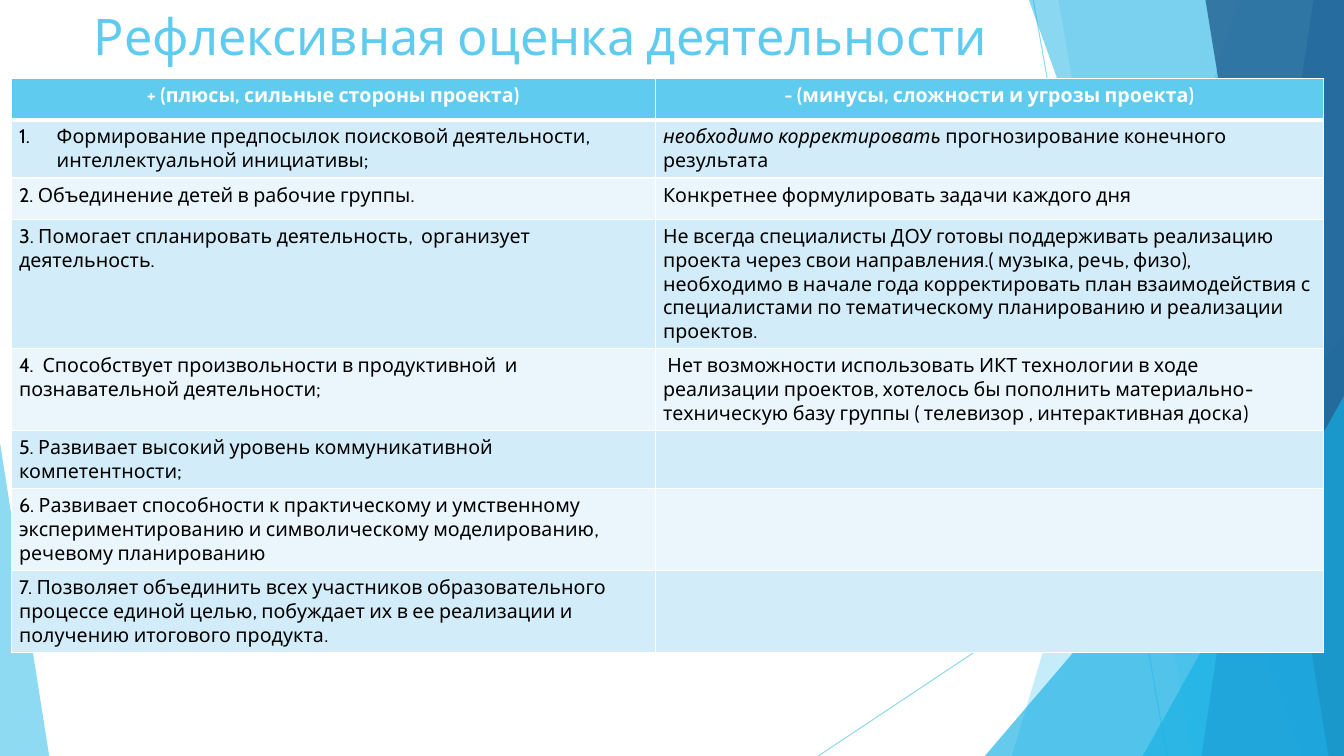
import pptx
import pptx.dml.color
import pptx.enum.shapes
import pptx.enum.text
import pptx.oxml
import pptx.oxml.ns
import pptx.util
from lxml import etree

Cm, Pt = pptx.util.Cm, pptx.util.Pt
RGB = pptx.dml.color.RGBColor.from_string
qn = pptx.oxml.ns.qn

FONT = "Cabin"
COLORS = {"sky": "5FCBEF", "cyan": "17B0E4", "blue": "2E83C3", "navy": "226292",
          "odd": "D2ECF9", "even": "EAF6FC", "white": "FFFFFF", "black": "000000"}
WIDTH, HEIGHT = 33.87, 19.05


def paint(color_format, color, opacity):
    """Apply a palette colour with an opacity in percent to a fill or line."""
    color_format.solid()
    color_format.fore_color.rgb = RGB(COLORS[color])
    srgb = color_format._xPr.find(".//" + qn("a:srgbClr"))
    etree.SubElement(srgb, qn("a:alpha"), val=str(opacity * 1000))


def style(run, size, color, bold=False):
    run.font.name = FONT
    run.font.size = Pt(size)
    run.font.bold = bold
    run.font.color.rgb = RGB(COLORS[color])


prs = pptx.Presentation()
prs.slide_width, prs.slide_height = Cm(WIDTH), Cm(HEIGHT)
slide = prs.slides.add_slide(prs.slide_layouts[5])
shapes = slide.shapes

# Thin crossing rays
for x1, y1, x2, y2 in [(26.04, 0, 29.41, HEIGHT), (WIDTH, 10.24, 20.62, HEIGHT)]:
    ray = shapes.add_connector(pptx.enum.shapes.MSO_CONNECTOR.STRAIGHT,
                               Cm(x1), Cm(y1), Cm(x2), Cm(y2))
    ray.line.width = Pt(0.75)
    paint(ray.line.fill, "sky", 70)
    etree.SubElement(ray._element.spPr, qn("a:effectLst"))

# Facets from back to front. Two numbers: left edge of a full-height band at its
# top and bottom. Five numbers: left, top, width, height and apex of a triangle.
facets = [
    ((31.19, 25.5), "sky", 36),
    ((26.67, 30.05), "sky", 20),
    ((24.82, 8.46, 9.05, 10.59, 1), "cyan", 66),
    ((25.93, 32.79), "cyan", 50),
    ((33.1, 30.28), "blue", 70),
    ((30.38, 33.48), "navy", 80),
    ((28.8, 9.98, 5.07, 9.07, 1), "cyan", 66),
    ((0, 11.15, 1.24, 7.9, 0), "sky", 70),
]
for geometry, color, opacity in facets:
    if len(geometry) == 2:
        top_x, bottom_x = geometry
        outline = shapes.build_freeform(Cm(top_x), Cm(0))
        outline.add_line_segments([(Cm(WIDTH), Cm(0)), (Cm(WIDTH), Cm(HEIGHT)),
                                   (Cm(bottom_x), Cm(HEIGHT))])
        facet = outline.convert_to_shape()
    else:
        *box, apex = geometry
        facet = shapes.add_shape(pptx.enum.shapes.MSO_SHAPE.ISOSCELES_TRIANGLE,
                                 *[Cm(length) for length in box])
        facet.adjustments[0] = apex
    paint(facet.fill, color, opacity)
    facet.line.fill.background()
    facet.shadow.inherit = False

# Title, brought in front of the facets
title = shapes.title
shapes._spTree.append(title._element)
title.left, title.top, title.width, title.height = Cm(2.11), Cm(0), Cm(23.88), Cm(3.66)
title.text_frame.text = "Рефлексивная оценка деятельности"
title.text_frame.auto_size = pptx.enum.text.MSO_AUTO_SIZE.NONE
title.text_frame.vertical_anchor = pptx.enum.text.MSO_ANCHOR.TOP
title.text_frame.paragraphs[0].alignment = pptx.enum.text.PP_ALIGN.LEFT
style(title.text_frame.paragraphs[0].runs[0], 36, "sky")

# Strengths and weaknesses; a cell is a list of runs
rows = [
    (["+ (плюсы, сильные стороны проекта)"],
     ["- (минусы, сложности и угрозы проекта)"]),
    (["Формирование предпосылок поисковой деятельности, интеллектуальной инициативы;"],
     ["необходимо корректировать ", "прогнозирование конечного результата"]),
    (["2. Объединение детей в рабочие группы."],
     ["Конкретнее формулировать задачи каждого дня"]),
    (["3. Помогает спланировать деятельность,  организует деятельность."],
     ["Не всегда специалисты ДОУ готовы поддерживать реализацию проекта через свои "
      "направления.( музыка, речь, физо), необходимо в начале года корректировать план "
      "взаимодействия с специалистами по тематическому планированию и реализации проектов."]),
    (["4.  Способствует произвольности в продуктивной  и познавательной деятельности;"],
     [" Нет возможности использовать ИКТ технологии в ходе реализации проектов, хотелось бы "
      "пополнить материально- техническую базу группы ( телевизор , интерактивная доска)"]),
    (["5. Развивает высокий уровень коммуникативной компетентности;"], []),
    (["6. Развивает способности к практическому и умственному экспериментированию и "
      "символическому моделированию, речевому планированию"], []),
    (["7. Позволяет объединить всех участников образовательного процессе единой целью, "
      "побуждает их в ее реализации и получению итогового продукта."], []),
]
ROW_HEIGHT = 1.04
assessment = shapes.add_table(len(rows), 2, Cm(0.28), Cm(1.98), Cm(33.07),
                              Cm(ROW_HEIGHT * len(rows))).table
for column, width in zip(assessment.columns, (16.23, 16.84)):
    column.width = Cm(width)

for r, row in enumerate(rows):
    assessment.rows[r].height = Cm(ROW_HEIGHT)
    header = r == 0
    for c, texts in enumerate(row):
        cell = assessment.cell(r, c)
        cell.margin_left = cell.margin_right = Cm(0.2)
        cell.margin_top = cell.margin_bottom = Cm(0.13)
        cell.fill.solid()
        cell.fill.fore_color.rgb = RGB(COLORS["sky" if header else "odd" if r % 2 else "even"])
        paragraph = cell.text_frame.paragraphs[0]
        if header:
            paragraph.alignment = pptx.enum.text.PP_ALIGN.CENTER
        for text in texts:
            run = paragraph.add_run()
            run.text = text
            style(run, 14, "white" if header else "black", bold=header)
        borders = {"lnL": 1, "lnR": 1, "lnT": 3 if r == 1 else 1, "lnB": 3 if header else 1}
        for position, (side, points) in enumerate(borders.items()):
            border = pptx.oxml.parse_xml(
                f'<a:{side} {pptx.oxml.ns.nsdecls("a")} w="{Pt(points)}"><a:solidFill>'
                f'<a:srgbClr val="{COLORS["white"]}"/></a:solidFill></a:{side}>')
            cell._tc.get_or_add_tcPr().insert(position, border)

assessment.cell(1, 1).text_frame.paragraphs[0].runs[0].font.italic = True

# Automatic number with a hanging indent for the first strength
numbered = assessment.cell(1, 0).text_frame.paragraphs[0]._p.get_or_add_pPr()
numbered.set("marL", str(Cm(0.95)))
numbered.set("indent", str(-Cm(0.95)))
etree.SubElement(numbered, qn("a:buFont"), typeface="+mj-lt")
etree.SubElement(numbered, qn("a:buAutoNum"), type="arabicPeriod")

prs.save("out.pptx")
